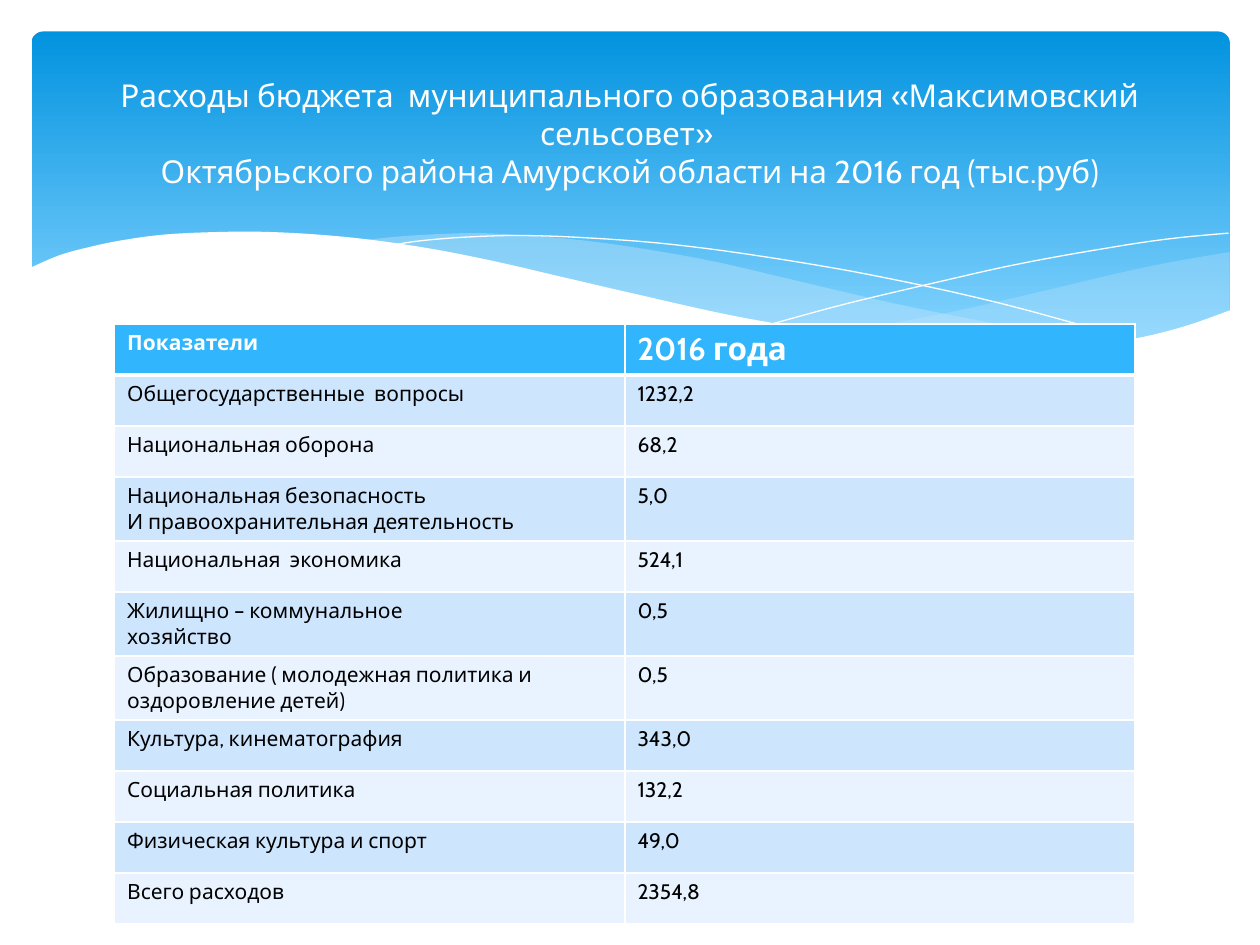
"""Build the municipal budget expenditure slide with a wave banner and a table."""
import dataclasses
from typing import Optional

import lxml.etree
import pptx
import pptx.dml.color
import pptx.enum.shapes
import pptx.enum.text
import pptx.oxml.ns
import pptx.util
from pptx.util import Inches, Pt

FONT = "Cabin"
WHITE = "FFFFFF"
MIST = "C6E7FC"
BANDS = ("E8F3FF", "CEE5FE")
STEPS = 5

Point = tuple[float, float]


@dataclasses.dataclass
class Wave:
    """A ribbon or line made of smooth edges; alpha is in percent."""
    edges: list[list[Point]]
    fill: Optional[str] = None
    alpha: int = 100


@dataclasses.dataclass
class Expense:
    """One table row."""
    label: str
    amount: str


WAVES = [
    Wave([[(9.76, 2), (9.35, 2.07), (8.91, 2.16), (8.32, 2.3), (7.53, 2.48), (6.61, 2.65)],
          [(6.61, 2.65), (7.05, 2.71), (7.57, 2.76), (8.03, 2.78), (8.54, 2.76),
           (8.97, 2.7), (9.35, 2.62), (9.76, 2.47)]], MIST, 29),
    Wave([[(8.93, 2.73), (8.37, 2.65), (7.75, 2.54), (7.06, 2.4), (6.29, 2.22),
           (5.69, 2.08), (5.14, 1.98), (4.65, 1.91), (4.2, 1.87), (3.8, 1.85),
           (3.44, 1.86), (3.13, 1.88), (2.86, 1.91)],
          [(2.86, 1.91), (3.42, 1.99), (4.04, 2.11), (4.91, 2.32), (5.66, 2.48),
           (6.34, 2.61), (6.95, 2.7), (7.48, 2.76), (7.96, 2.78), (8.48, 2.77),
           (8.93, 2.73)]], MIST, 40),
    Wave([[(3.09, 1.95), (3.35, 1.91), (3.74, 1.88), (4.16, 1.87), (4.69, 1.89),
           (5.33, 1.94), (6.08, 2.04), (6.95, 2.19), (7.95, 2.41), (9.07, 2.72)]]),
    Wave([[(6.13, 2.57), (6.72, 2.41), (7.48, 2.23), (8.06, 2.1), (8.66, 1.99),
           (9.24, 1.9), (9.75, 1.85)]]),
    Wave([[(9.77, 2.46), (9.4, 2.59), (8.99, 2.69), (8.5, 2.75), (8.09, 2.77),
           (7.61, 2.75), (7.08, 2.7), (6.48, 2.62), (5.79, 2.5), (5.03, 2.33),
           (4.47, 2.2), (3.91, 2.07), (3.4, 1.97), (2.92, 1.9), (2.5, 1.86),
           (2.11, 1.84), (1.77, 1.84), (1.32, 1.86), (0.95, 1.91), (0.67, 1.97),
           (0.46, 2.03), (0.23, 2.13)],
          [(0.23, 3.29), (9.77, 3.29)]], WHITE),
]

EXPENSES = [
    Expense("Общегосударственные  вопросы", "1232,2"),
    Expense("Национальная оборона", "68,2"),
    Expense("Национальная безопасность\nИ правоохранительная деятельность", "5,0"),
    Expense("Национальная  экономика", "524,1"),
    Expense("Жилищно – коммунальное\nхозяйство", "0,5"),
    Expense("Образование ( молодежная политика и оздоровление детей)", "0,5"),
    Expense("Культура, кинематография", "343,0"),
    Expense("Социальная политика", "132,2"),
    Expense("Физическая культура и спорт", "49,0"),
    Expense("Всего расходов", "2354,8"),
]


def rgb(value: str) -> pptx.dml.color.RGBColor:
    """Turn a hex string into a colour."""
    return pptx.dml.color.RGBColor.from_string(value)


def smooth(pts: list[Point]) -> list[Point]:
    """Run a Catmull-Rom curve through the points."""
    if len(pts) < 3:
        return pts
    padded = [pts[0], *pts, pts[-1]]
    curve = [pts[0]]
    for a, b, c, d in zip(padded, padded[1:], padded[2:], padded[3:]):
        for step in range(1, STEPS + 1):
            t = step / STEPS
            x, y = ((2 * q + (r - p) * t + (2 * p - 5 * q + 4 * r - u) * t ** 2
                     + (3 * q - p - 3 * r + u) * t ** 3) / 2
                    for p, q, r, u in zip(a, b, c, d))
            curve.append((x, y))
    return curve


def style_text(tf, size: float, color: str, bold: bool = False) -> None:
    """Format every run in a text frame."""
    for p in tf.paragraphs:
        for r in p.runs:
            r.font.name = FONT
            r.font.size = Pt(size)
            r.font.bold = bold
            r.font.color.rgb = rgb(color)


def draw_banner(s) -> None:
    """Draw the rounded gradient panel."""
    sp = s.shapes.add_shape(pptx.enum.shapes.MSO_SHAPE.ROUNDED_RECTANGLE,
                            Inches(0.25), Inches(0.25), Inches(9.51), Inches(2.7))
    sp.adjustments[0] = 0.034
    sp.shadow.inherit = False
    sp.line.fill.background()
    sp.fill.gradient()
    sp.fill.gradient_angle = 270
    for stop, color, position in zip(sp.fill.gradient_stops, ("0293E0", "83D3FE"), (0, 0.9)):
        stop.color.rgb = rgb(color)
        stop.position = position


def draw_wave(s, wave: Wave) -> None:
    """Draw a filled ribbon, or a hairline when there is no fill."""
    pts = [(Inches(x), Inches(y)) for edge in wave.edges for x, y in smooth(edge)]
    builder = s.shapes.build_freeform(*pts[0])
    builder.add_line_segments(pts[1:], close=wave.fill is not None)
    sp = builder.convert_to_shape()
    sp.shadow.inherit = False
    if wave.fill is None:
        sp.fill.background()
        sp.line.color.rgb = rgb(WHITE)
        sp.line.width = Pt(0)
        return
    sp.line.fill.background()
    sp.fill.solid()
    sp.fill.fore_color.rgb = rgb(wave.fill)
    if wave.alpha < 100:
        clr = sp._element.spPr.find(".//" + pptx.oxml.ns.qn("a:srgbClr"))
        lxml.etree.SubElement(clr, pptx.oxml.ns.qn("a:alpha"), val=str(wave.alpha * 1000))


def set_borders(cell, top: float, bottom: float) -> None:
    """Give a cell white borders with widths in points."""
    tcPr = cell._tc.get_or_add_tcPr()
    sides = {"a:lnL": 1, "a:lnR": 1, "a:lnT": top, "a:lnB": bottom}
    for i, (tag, width) in enumerate(sides.items()):
        ln = lxml.etree.Element(pptx.oxml.ns.qn(tag), w=str(Pt(width)))
        fill = lxml.etree.SubElement(ln, pptx.oxml.ns.qn("a:solidFill"))
        lxml.etree.SubElement(fill, pptx.oxml.ns.qn("a:srgbClr"), val=WHITE)
        tcPr.insert(i, ln)


def draw_cell(cell, text: str, size: float, row: int) -> None:
    """Fill, border and letter one table cell."""
    header = row == 0
    cell.text_frame.text = text
    style_text(cell.text_frame, size, WHITE if header else "000000", header)
    cell.fill.solid()
    cell.fill.fore_color.rgb = rgb("31B6FD" if header else BANDS[row % 2])
    set_borders(cell, 3 if row == 1 else 1, 3 if header else 1)


def draw_table(s) -> None:
    """Draw the expenditure table."""
    rows = [Expense("Показатели", "2016 года"), *EXPENSES]
    table = s.shapes.add_table(len(rows), 2, Inches(0.91), Inches(2.57),
                               Inches(8.1), Inches(4.46)).table
    for i, expense in enumerate(rows):
        draw_cell(table.cell(i, 0), expense.label, 12, i)
        draw_cell(table.cell(i, 1), expense.amount, 12 if i else 18, i)


def draw_title(s) -> None:
    """Place the title above the banner."""
    sp = s.shapes.title
    sp.left, sp.top, sp.width, sp.height = map(Inches, (0.5, 0.37, 9, 1.37))
    tf = sp.text_frame
    tf.text = ("Расходы бюджета  муниципального образования «Максимовский сельсовет» \v"
               "Октябрьского района Амурской области на 2016 год (тыс.руб)")
    tf.word_wrap = True
    tf.auto_size = pptx.enum.text.MSO_AUTO_SIZE.NONE
    tf.vertical_anchor = pptx.enum.text.MSO_ANCHOR.MIDDLE
    tf.paragraphs[0].alignment = pptx.enum.text.PP_ALIGN.CENTER
    style_text(tf, 18, WHITE)
    sp._element.getparent().append(sp._element)


def main() -> None:
    """Assemble and save the slide."""
    prs = pptx.Presentation()
    prs.slide_width, prs.slide_height = Inches(10), Inches(7.5)
    s = prs.slides.add_slide(prs.slide_layouts[5])
    draw_banner(s)
    for wave in WAVES:
        draw_wave(s, wave)
    draw_table(s)
    draw_title(s)
    prs.save("out.pptx")


if __name__ == "__main__":
    main()
